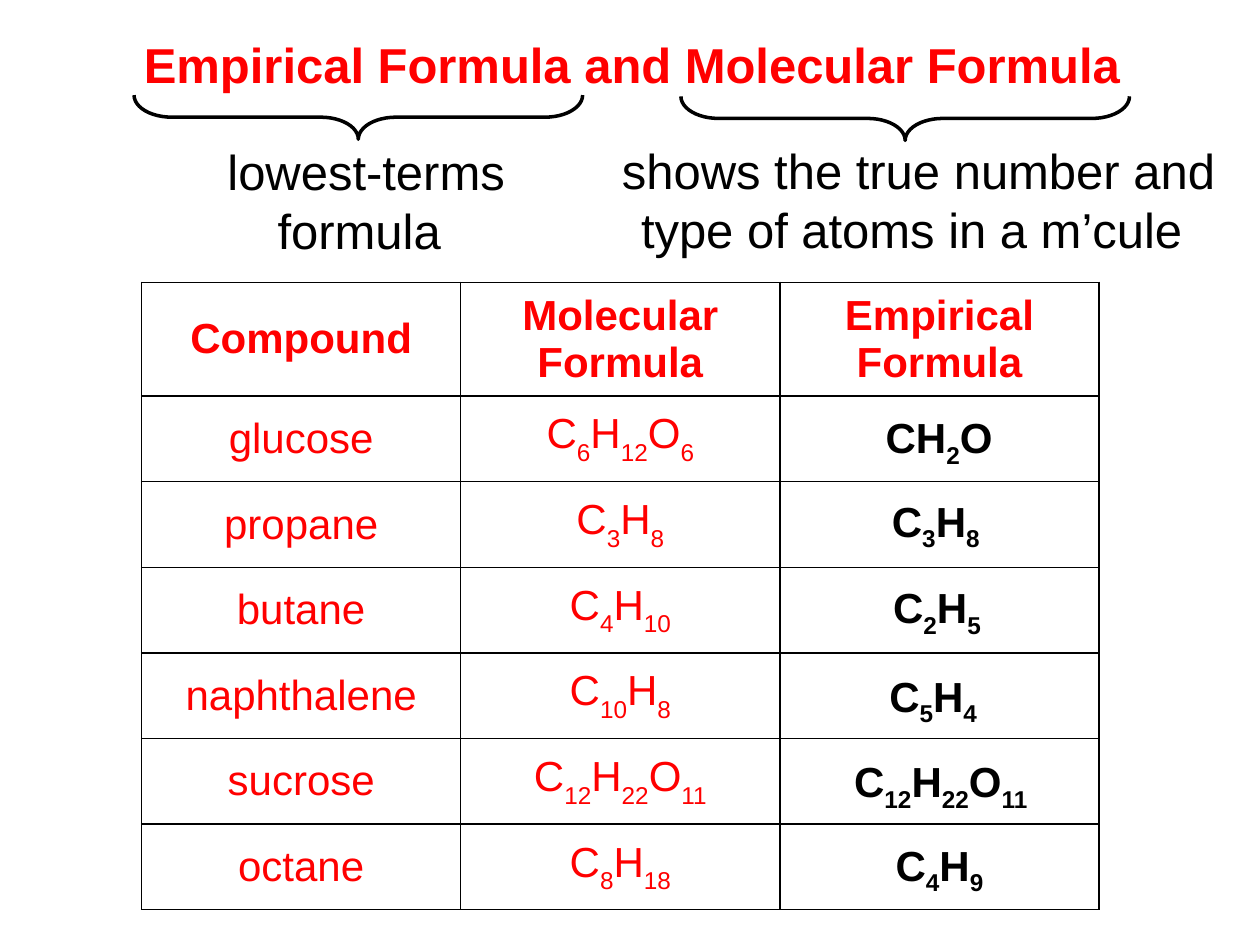
"""Build the slide that compares empirical and molecular formulas."""
from itertools import groupby

from lxml import etree
from pptx import Presentation
from pptx import util as u
from pptx.dml.color import RGBColor
from pptx.enum import shapes, text
from pptx.oxml import ns

RED = RGBColor(0xFF, 0, 0)
BLACK = RGBColor(0, 0, 0)
FONT = "Arial"
LARGE, MEDIUM = 28, 24

TITLE = "Empirical Formula and Molecular Formula"
TITLE_BOX = (75, 16, 581, 41)
DEFINITIONS = [
    {"text": "lowest-terms\nformula ", "box": (122.4, 77.5, 173.5, 74),
     "brace": (192.2, -61.2), "wrap": False, "indent": 0},
    {"text": "shows the true number and\ntype of atoms in a m’cule ", "box": (321.8, 77, 384.5, 74),
     "brace": (504.7, -60.5), "wrap": True, "indent": 21.6},
]
BRACE_SIZE = (25.2, 256.3)

HEADERS = ["Compound", "Molecular Formula", "Empirical\nFormula"]
COMPOUNDS = [
    ("glucose", "C6H12O6"),
    ("propane", "C3H8"),
    ("butane", "C4H10"),
    ("naphthalene", "C10H8"),
    ("sucrose", "C12H22O11"),
    ("octane", "C8H18"),
]
EMPIRICAL = [
    ("CH2O", (499, 231.8, 77)),
    ("C3H8", (502.6, 279.4, 67)),
    ("C2H5", (503.3, 329, 67)),
    ("C5H4", (501.1, 379.4, 67)),
    ("C12H22O11", (481, 428.4, 121)),
    ("C4H9", (504.7, 475.9, 67)),
]
TABLE_LEFT, TABLE_TOP = 80.9, 161.3
COLUMN_WIDTH, HEADER_HEIGHT, ROW_HEIGHT = 182.4, 65, 48.95


def points(values):
    return [u.Pt(value) for value in values]


def format_text(frame, size, color, bold=False, align=text.PP_ALIGN.CENTER):
    for paragraph in frame.paragraphs:
        paragraph.alignment = align
        for run in paragraph.runs:
            font = run.font
            font.name, font.size, font.bold = FONT, u.Pt(size), bold
            font.color.rgb = color


def write_formula(frame, formula, baseline):
    for is_digit, characters in groupby(formula, str.isdigit):
        run = frame.paragraphs[0].add_run()
        run.text = "".join(characters)
        if is_digit:
            run.font._element.set("baseline", str(baseline * 1000))


def add_box(parent, box, wrap=False, anchor=text.MSO_ANCHOR.TOP):
    frame = parent.add_textbox(*points(box)).text_frame
    frame.word_wrap = wrap
    frame.vertical_anchor = anchor
    return frame


def add_definition(slide, definition):
    group = slide.shapes.add_group_shape().shapes
    frame = add_box(group, definition["box"], definition["wrap"], text.MSO_ANCHOR.MIDDLE)
    frame.text = definition["text"]
    format_text(frame, LARGE, BLACK)
    for paragraph in frame.paragraphs:
        properties = paragraph._p.get_or_add_pPr()
        properties.set("marL", "0")
        properties.set("indent", str(u.Pt(definition["indent"])))
    brace = group.add_shape(shapes.MSO_SHAPE.LEFT_BRACE, *points(definition["brace"] + BRACE_SIZE))
    brace.rotation = 270
    brace.adjustments[0] = 0.85
    brace.shadow.inherit = False
    brace.fill.background()
    brace.line.color.rgb = BLACK
    brace.line.width = u.Pt(2)


def add_borders(cell):
    properties = cell._tc.get_or_add_tcPr()
    for index, side in enumerate(("lnL", "lnR", "lnT", "lnB")):
        line = etree.Element(ns.qn("a:" + side), w=str(u.Pt(1)))
        fill = etree.SubElement(line, ns.qn("a:solidFill"))
        etree.SubElement(fill, ns.qn("a:srgbClr"), val=str(BLACK))
        properties.insert(index, line)


def add_compound_table(slide):
    rows, columns = len(COMPOUNDS) + 1, len(HEADERS)
    heights = [HEADER_HEIGHT] + [ROW_HEIGHT] * len(COMPOUNDS)
    box = points((TABLE_LEFT, TABLE_TOP, COLUMN_WIDTH * columns, sum(heights)))
    table = slide.shapes.add_table(rows, columns, *box).table
    table.first_row = table.horz_banding = False
    for column in table.columns:
        column.width = u.Pt(COLUMN_WIDTH)
    for row, height in zip(table.rows, heights):
        row.height = u.Pt(height)
    for column, header in enumerate(HEADERS):
        table.cell(0, column).text_frame.text = header
    for row, (name, formula) in enumerate(COMPOUNDS, 1):
        table.cell(row, 0).text_frame.text = name
        write_formula(table.cell(row, 1).text_frame, formula, -30)
    for index, cell in enumerate(table.iter_cells()):
        cell.fill.background()
        cell.vertical_anchor = text.MSO_ANCHOR.MIDDLE
        add_borders(cell)
        format_text(cell.text_frame, MEDIUM, RED, bold=index < columns)


def main():
    presentation = Presentation()
    presentation.slide_width, presentation.slide_height = points((720, 540))
    slide = presentation.slides.add_slide(presentation.slide_layouts[5])

    title = slide.shapes.title
    title.left, title.top, title.width, title.height = points(TITLE_BOX)
    title.text_frame.text = TITLE
    title.text_frame.word_wrap = False
    title.text_frame.vertical_anchor = text.MSO_ANCHOR.MIDDLE
    format_text(title.text_frame, LARGE, RED, bold=True, align=text.PP_ALIGN.LEFT)

    add_compound_table(slide)
    for definition in DEFINITIONS:
        add_definition(slide, definition)
    for formula, (left, top, width) in EMPIRICAL:
        frame = add_box(slide.shapes, (left, top, width, 36))
        write_formula(frame, formula, -25)
        format_text(frame, MEDIUM, BLACK, bold=True, align=text.PP_ALIGN.LEFT)

    presentation.save("out.pptx")


if __name__ == "__main__":
    main()
